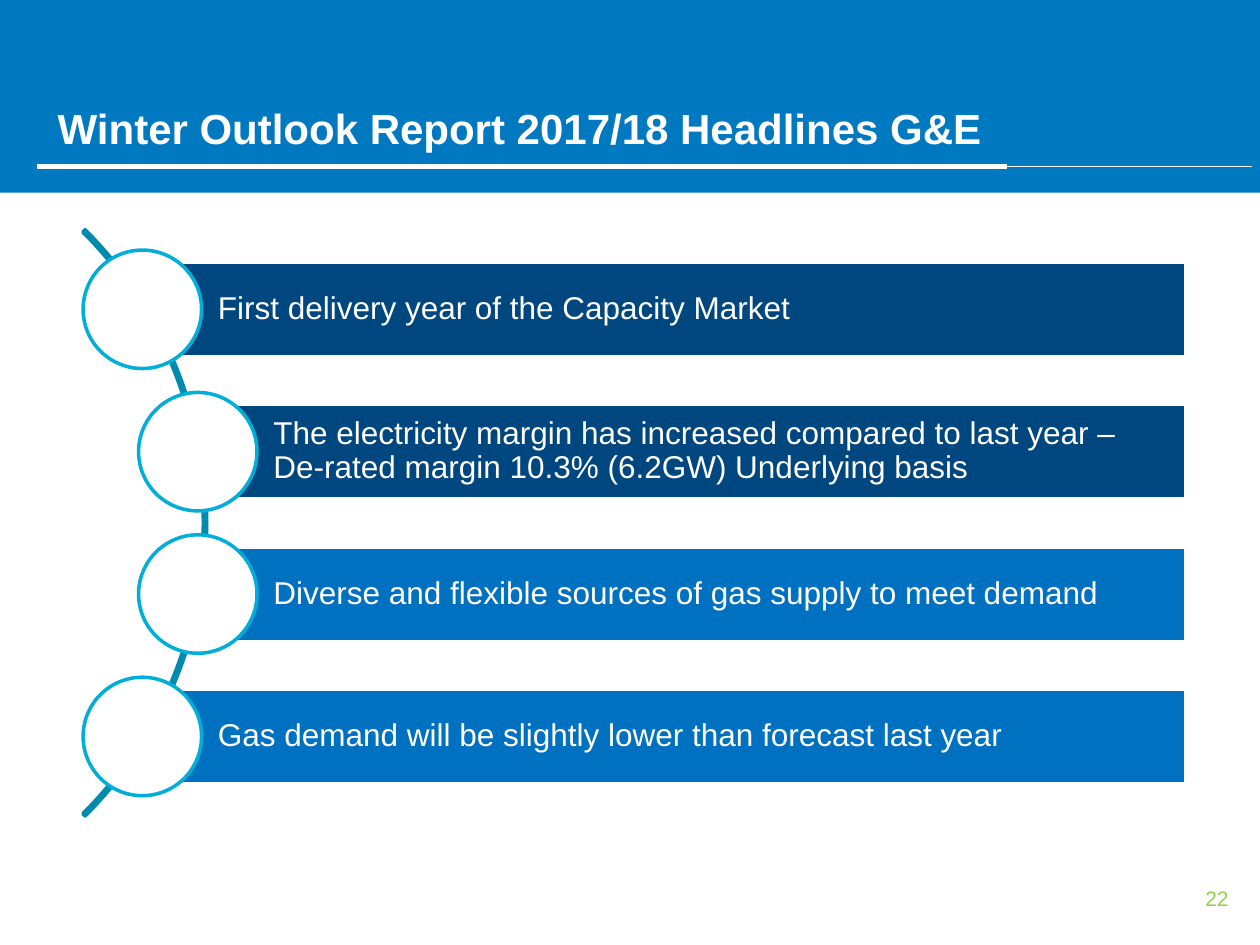
import pptx
import pptx.util
import pptx.dml.color
import pptx.enum.shapes
import pptx.enum.text
import pptx.oxml
import pptx.oxml.ns

Inches, Pt = pptx.util.Inches, pptx.util.Pt
SHAPE = pptx.enum.shapes.MSO_SHAPE
ANCHOR = pptx.enum.text.MSO_ANCHOR
ALIGN = pptx.enum.text.PP_ALIGN


def paint(fmt, color):
    """Give a fill or a line's fill a solid hex colour."""
    fmt.solid()
    fmt.fore_color.rgb = pptx.dml.color.RGBColor.from_string(color)


def write(sp, text, size, color, bold=False, align=ALIGN.LEFT, **frame):
    """Fill a shape's text frame with one paragraph."""
    tf = sp.text_frame
    for name, value in {"word_wrap": True, **frame}.items():
        setattr(tf, name, value)
    p = tf.paragraphs[0]
    p.text = text
    p.alignment = align
    for r in p.runs:
        for name, value in {"name": "Arial", "size": Pt(size), "bold": bold}.items():
            setattr(r.font, name, value)
        paint(r.font.fill, color)
    return p


prs = pptx.Presentation()
prs.slide_width, prs.slide_height = Inches(10), Inches(7.5)
s = prs.slides.add_slide(prs.slide_layouts[6])

# Slide number
sp = s.shapes.add_textbox(Inches(7.52), Inches(6.98), Inches(2.33), Inches(0.4))
write(sp, "22", 12, "92D050", align=ALIGN.RIGHT)

# Arc behind the circles
sp = s.shapes.add_shape(SHAPE.BLOCK_ARC, Inches(-4.94), Inches(0.86), Inches(6.58), Inches(6.58))
for i, value in enumerate((189, 27, 0.004)):
    sp.adjustments[i] = value
sp.shadow.inherit = False
sp.fill.background()
paint(sp.line.fill, "008BAE")
sp.line.width = Pt(2)

# Headline bars, each with a circle centred on its left end
headlines = [
    (1.13, "00467F", "First delivery year of the Capacity Market"),
    (1.57, "00467F", "The electricity margin has increased compared to last year –\v"
                     "De-rated margin 10.3% (6.2GW) Underlying basis"),
    (1.57, "0070C0", "Diverse and flexible sources of gas supply to meet demand"),
    (1.13, "0070C0", "Gas demand will be slightly lower than forecast last year"),
]
bar_right, bar_h, circle_d = 9.41, 0.75, 0.94
for i, (left, color, text) in enumerate(headlines):
    top = 2.08 + 1.13 * i
    bar = s.shapes.add_shape(SHAPE.RECTANGLE, Inches(left), Inches(top),
                             Inches(bar_right - left), Inches(bar_h))
    circle = s.shapes.add_shape(SHAPE.OVAL, Inches(left - circle_d / 2),
                                Inches(top + (bar_h - circle_d) / 2),
                                Inches(circle_d), Inches(circle_d))
    for sp, fill, line in ((bar, color, "FFFFFF"), (circle, "FFFFFF", "00AED9")):
        sp.shadow.inherit = False
        paint(sp.fill, fill)
        paint(sp.line.fill, line)
        sp.line.width = Pt(2)
    p = write(bar, text, 18, "FFFFFF", vertical_anchor=ANCHOR.MIDDLE,
              margin_left=Inches(0.6), margin_right=Inches(0.05),
              margin_top=Inches(0.05), margin_bottom=Inches(0.05))
    p.line_spacing = 0.9

# Title band
sp = s.shapes.add_shape(SHAPE.RECTANGLE, 0, Inches(-0.04), Inches(10), Inches(1.57))
sp.shadow.inherit = False
paint(sp.fill, "0079C1")
sp.line.fill.background()

# Thin and thick rules under the title
for x1, x2, width in ((0.3, 9.94, 0.75), (0.29, 7.99, 3)):
    rule = s.shapes.add_connector(pptx.enum.shapes.MSO_CONNECTOR.STRAIGHT,
                                  Inches(x1), Inches(1.32), Inches(x2), Inches(1.32))
    paint(rule.line.fill, "FFFFFF")
    rule.line.width = Pt(width)
    rule._element.spPr.append(pptx.oxml.parse_xml(
        "<a:effectLst %s/>" % pptx.oxml.ns.nsdecls("a")))

# Title
sp = s.shapes.add_textbox(Inches(0.36), Inches(0.75), Inches(7.71), Inches(0.51))
write(sp, "Winter Outlook Report 2017/18 Headlines G&E", 24, "FFFFFF", bold=True,
      vertical_anchor=ANCHOR.BOTTOM)

prs.save("out.pptx")
